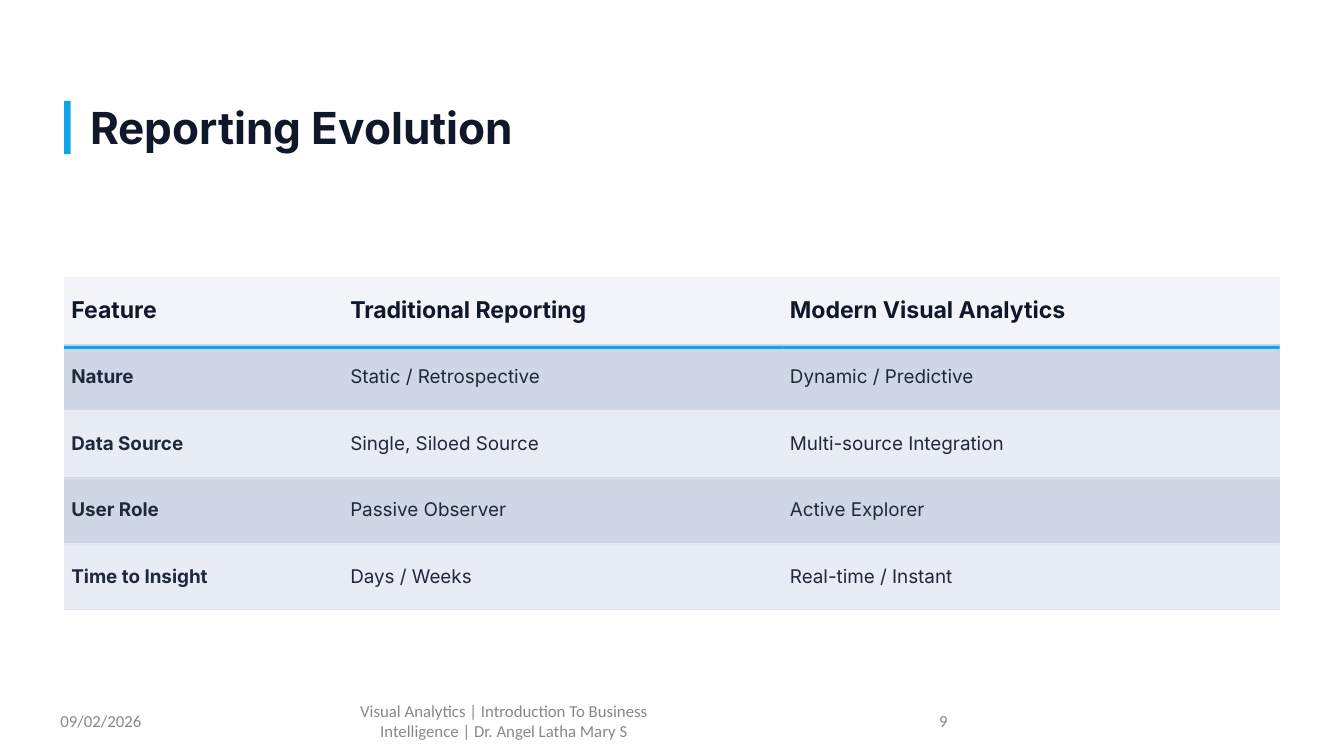
from pptx import Presentation
from pptx.dml.color import RGBColor
from pptx.enum.shapes import MSO_SHAPE as SHAPE
from pptx.enum.text import MSO_ANCHOR as ANCHOR, PP_ALIGN as ALIGN
from pptx.oxml.ns import qn
from pptx.util import Pt
from lxml.etree import SubElement

INK, BODY, GREY = "0F172A", "1E293B", "888888"
ACCENT, HAIRLINE = "0EA5E9", "E2E8F0"
HEADER_FILL, BANDS = "F1F5F9", ("CFD7E7", "E8ECF4")

ROWS = [
    ("Feature", "Traditional Reporting", "Modern Visual Analytics"),
    ("Nature", "Static / Retrospective", "Dynamic / Predictive"),
    ("Data Source", "Single, Siloed Source", "Multi-source Integration"),
    ("User Role", "Passive Observer", "Active Explorer"),
    ("Time to Insight", "Days / Weeks", "Real-time / Instant"),
]
COL_WIDTHS = (199.2, 314.1, 355)


def color(value):
    return RGBColor.from_string(value)


def add_run(p, text, size, font, fill, bold=False):
    r = p.add_run()
    r.text = text
    r.font.size, r.font.name, r.font.bold = Pt(size), font, bold
    r.font.color.rgb = color(fill)


def add_bar(s, x, y, w, h, fill):
    sp = s.shapes.add_shape(SHAPE.RECTANGLE, Pt(x), Pt(y), Pt(w), Pt(h))
    sp.shadow.inherit = False
    sp.fill.solid()
    sp.fill.fore_color.rgb = color(fill)
    sp.line.fill.background()


def add_text(s, x, y, w, h, margins, anchor, align):
    tf = s.shapes.add_textbox(Pt(x), Pt(y), Pt(w), Pt(h)).text_frame
    tf.word_wrap = True
    tf.vertical_anchor = anchor
    tf.margin_left = tf.margin_right = Pt(margins[0])
    tf.margin_top = tf.margin_bottom = Pt(margins[1])
    p = tf.paragraphs[0]
    p.alignment = align
    return p


def add_title(s, x, y, w, h):
    p = add_text(s, x + 18.7, y, w - 18.7, h, (0, 0), ANCHOR.TOP, ALIGN.LEFT)
    add_run(p, "Reporting Evolution", 31.5, "Inter", INK, True)
    add_bar(s, x, y, 4.7, h, ACCENT)


def style_cell(cell, fill):
    # Borders go in before the fill, as the schema orders them
    tc_pr = cell._tc.get_or_add_tcPr()
    for side in ("a:lnL", "a:lnR", "a:lnT", "a:lnB"):
        SubElement(SubElement(tc_pr, qn(side), w="0"), qn("a:noFill"))
    cell.fill.solid()
    cell.fill.fore_color.rgb = color(fill)
    cell.vertical_anchor = ANCHOR.MIDDLE
    cell.margin_left = cell.margin_right = Pt(5.2)
    cell.margin_top = cell.margin_bottom = Pt(2.5)


def add_comparison(s, x, y, w, h):
    table = s.shapes.add_table(len(ROWS), len(COL_WIDTHS),
                               Pt(x), Pt(y), Pt(w), Pt(h)).table
    table.first_row = table.horz_banding = False
    for col, width in zip(table.columns, COL_WIDTHS):
        col.width = Pt(width)
    for i, row in enumerate(ROWS):
        table.rows[i].height = Pt(h / len(ROWS))
        head = i == 0
        for j, text in enumerate(row):
            cell = table.cell(i, j)
            style_cell(cell, HEADER_FILL if head else BANDS[(i - 1) % 2])
            add_run(cell.text_frame.paragraphs[0], text,
                    16.5 if head else 13.5, "Inter",
                    INK if head else BODY, head or j == 0)

    # Rules under each row: a thick one below the header, then hairlines
    for i in range(len(ROWS)):
        top, thick, fill = ((49, 2.3, ACCENT) if i == 0 else
                            (97 + 46.7 * (i - 1), 0.8, HAIRLINE))
        for j, width in enumerate(COL_WIDTHS):
            add_bar(s, x + sum(COL_WIDTHS[:j]), y + top, width, thick, fill)


def add_footer(s, x, y, h):
    parts = [
        (0, 168, ALIGN.LEFT, "09/02/2026"),
        (210, 228, ALIGN.CENTER, "Visual Analytics | Introduction To Business "
                                 "Intelligence | Dr. Angel Latha Mary S"),
        (480, 168, ALIGN.RIGHT, "9"),
    ]
    for dx, w, align, text in parts:
        p = add_text(s, x + dx, y, w, h, (7.2, 3.6), ANCHOR.MIDDLE, align)
        add_run(p, text, 12, "Calibri", GREY)


def main():
    prs = Presentation()
    prs.slide_width, prs.slide_height = Pt(960), Pt(540)
    s = prs.slides.add_slide(prs.slide_layouts[6])
    add_comparison(s, 45.8, 198, sum(COL_WIDTHS), 237.5)
    add_title(s, 45.8, 72, 911, 38.2)
    add_footer(s, 36, 500.5, 28.75)
    prs.save("out.pptx")


if __name__ == "__main__":
    main()
